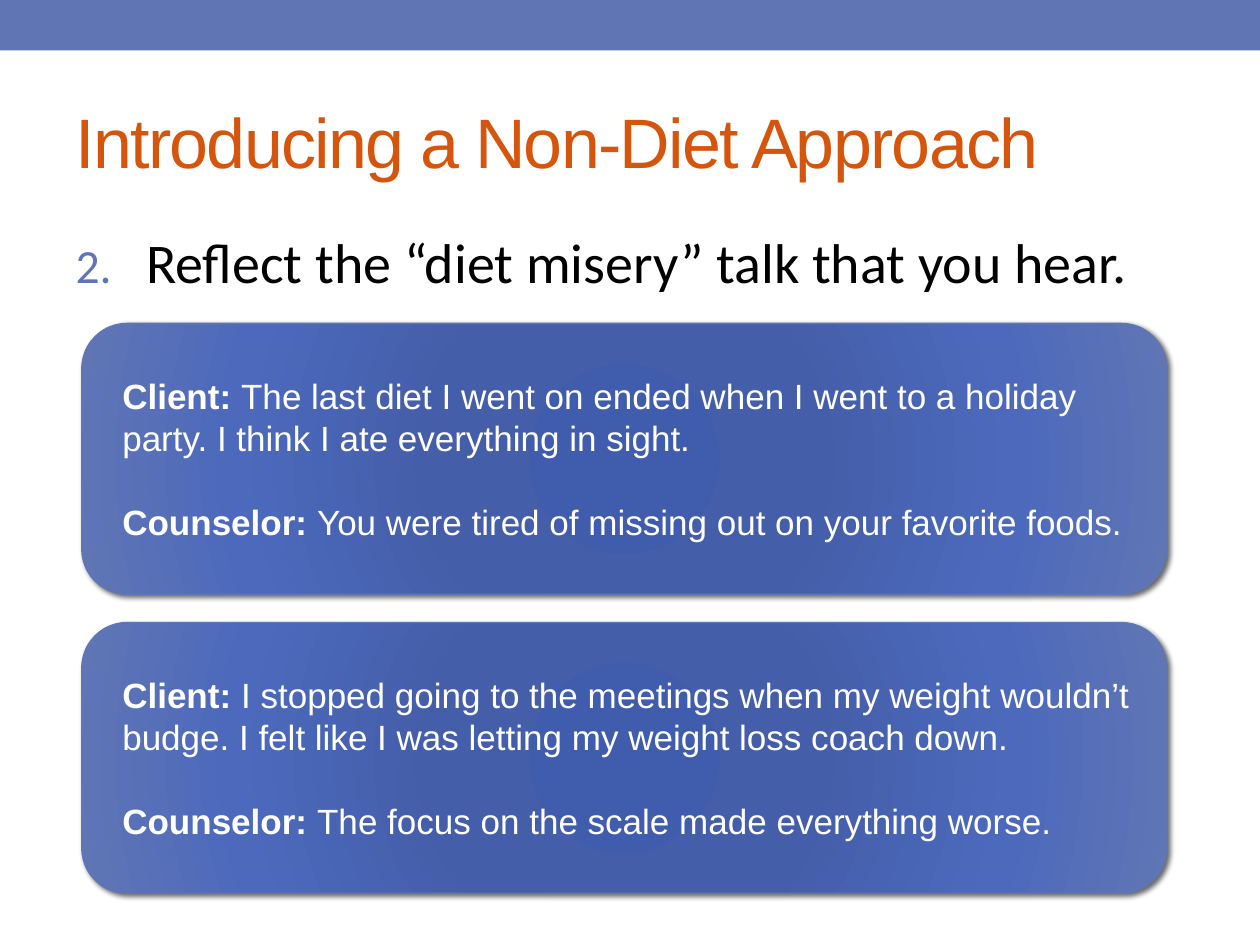
from lxml.etree import SubElement
from pptx import Presentation
from pptx.dml.color import RGBColor
from pptx.enum.shapes import MSO_SHAPE as Shape
from pptx.enum.text import MSO_ANCHOR as Anchor, PP_ALIGN as Align
from pptx.oxml.ns import qn
from pptx.util import Cm, Pt

BLUE = "6076B4"
GRADIENT = [(0, "405CAC"), (34, "445EA9"), (70, "4C69BC"), (100, BLUE)]
DIALOGUES = [
    [("Client: ", "The last diet I went on ended when I went to a holiday party. "
                  "I think I ate everything in sight."),
     ("Counselor: ", "You were tired of missing out on your favorite foods.")],
    [("Client: ", "I stopped going to the meetings when my weight wouldn’t budge. "
                  "I felt like I was letting my weight loss coach down."),
     ("Counselor: ", "The focus on the scale made everything worse.")],
]


def color(hex_string):
    return RGBColor.from_string(hex_string)


def add_xml(parent, tag, **attributes):
    return SubElement(parent, qn(tag), {key: str(value) for key, value in attributes.items()})


prs = Presentation()
prs.slide_width, prs.slide_height = Cm(25.4), Cm(19.05)
slide = prs.slides.add_slide(prs.slide_layouts[1])

top_band = slide.shapes.add_shape(Shape.RECTANGLE, 0, 0, prs.slide_width, Cm(1.02))
top_band.shadow.inherit = False
top_band.fill.solid()
top_band.fill.fore_color.rgb = color(BLUE)
top_band.line.fill.background()

# Title
title = slide.shapes.title
title.left, title.top, title.width, title.height = Cm(1.27), Cm(1.47), Cm(22.86), Cm(2.74)
title.text_frame.vertical_anchor = Anchor.MIDDLE
heading = title.text_frame.paragraphs[0]
heading.alignment = Align.LEFT
heading.font.name, heading.font.size = "Arial", Pt(40)
heading.font.color.rgb = color("D6550D")
heading_run = heading.add_run()
heading_run.text = "Introducing a Non-Diet Approach"
heading_run._r.get_or_add_rPr().set("spc", "-100")

# Numbered step
body = slide.placeholders[1]
body.left, body.top, body.width, body.height = Cm(1.27), Cm(4.45), Cm(22.86), Cm(13.54)
step = body.text_frame.paragraphs[0]
step.text = "Reflect the “diet misery” talk that you hear."
numbering = step._p.get_or_add_pPr()
numbering.set("marL", str(Cm(1.42)))
numbering.set("indent", str(-Cm(1.42)))
add_xml(add_xml(numbering, "a:buClr"), "a:srgbClr", val=BLUE)
add_xml(numbering, "a:buSzPct", val=85000)
add_xml(numbering, "a:buFont", typeface="+mj-lt")
add_xml(numbering, "a:buAutoNum", type="arabicPeriod", startAt=2)
step.space_after = Pt(10)
step.font.name, step.font.size = "Calibri", Pt(32)
step.font.color.rgb = color("000000")

# Dialogue cards
for row, dialogue in enumerate(DIALOGUES):
    card = slide.shapes.add_shape(Shape.ROUNDED_RECTANGLE, Cm(1.65), Cm(6.52 + 6.03 * row),
                                  Cm(21.87), Cm(5.46))
    card.line.color.rgb = color(BLUE)
    card.line.width = Pt(0.75)

    card.fill.gradient()
    gradient = card._element.spPr.find(qn("a:gradFill"))
    for part in list(gradient):
        gradient.remove(part)
    stops = add_xml(gradient, "a:gsLst")
    for percent, shade in GRADIENT:
        add_xml(add_xml(stops, "a:gs", pos=percent * 1000), "a:srgbClr", val=shade)
    circle = add_xml(gradient, "a:path", path="circle")
    add_xml(circle, "a:fillToRect", l=100000, t=100000, r=100000, b=100000)

    card.shadow.inherit = False
    effects = card._element.spPr.find(qn("a:effectLst"))
    shadow = add_xml(effects, "a:outerShdw", blurRad=Pt(3), dist=Pt(2), dir=45 * 60000,
                     algn="tl", rotWithShape=0)
    add_xml(add_xml(shadow, "a:srgbClr", val="000000"), "a:alpha", val=60000)

    talk = card.text_frame
    talk.word_wrap = True
    talk.vertical_anchor = Anchor.MIDDLE
    for turn, (speaker, words) in enumerate(dialogue):
        line = talk.add_paragraph() if turn else talk.paragraphs[0]
        line.alignment = Align.LEFT
        line._p.get_or_add_pPr().set("marL", str(Cm(0.3)))
        line.space_before = Pt(24 * turn)
        line.font.name, line.font.size = "Arial", Pt(20)
        line.font.color.rgb = color("FFFFFF")
        for text, bold in ((speaker, True), (words, False)):
            run = line.add_run()
            run.text = text
            run.font.bold = bold

prs.save("out.pptx")
